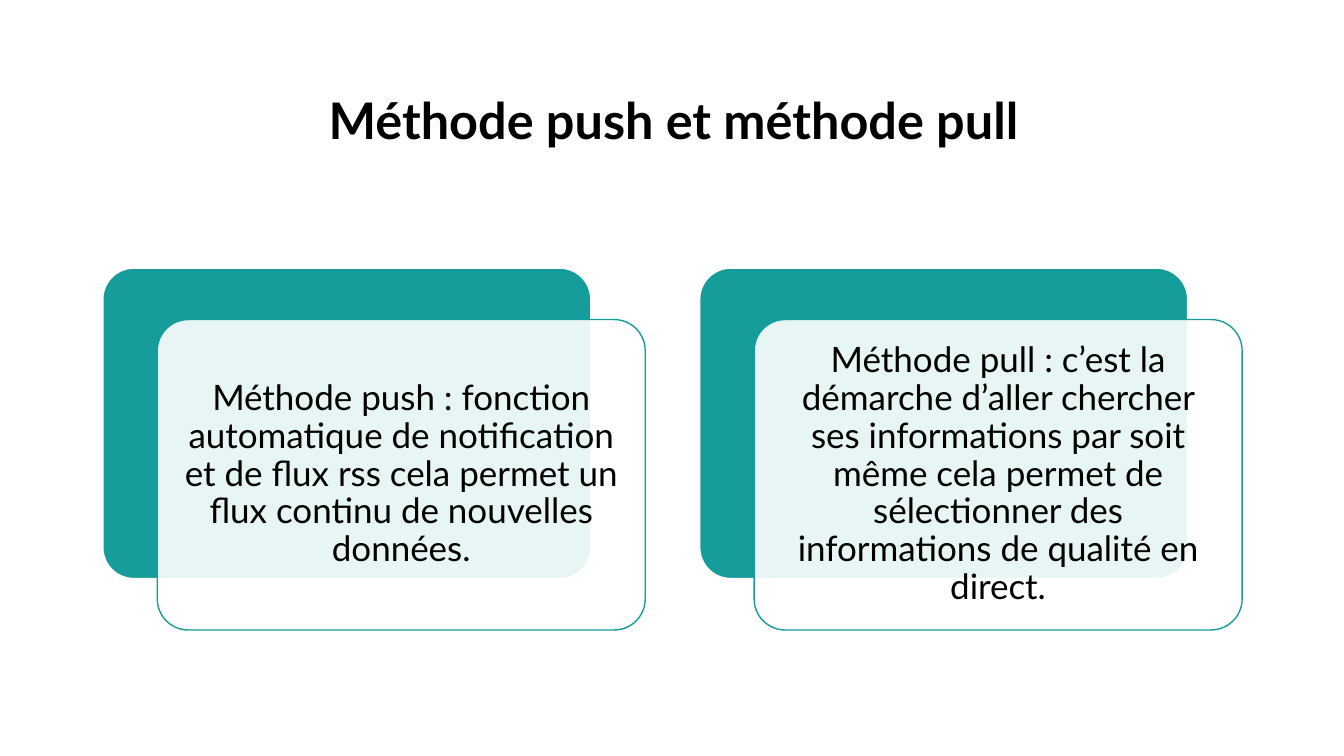
from lxml.etree import SubElement
from pptx import Presentation
from pptx.dml.color import RGBColor
from pptx.enum.shapes import MSO_SHAPE
from pptx.enum.text import MSO_ANCHOR, PP_ALIGN
from pptx.oxml.ns import qn
from pptx.util import Pt

PX = 9144  # 100 px to the inch
TEAL, WHITE, BLACK = "169C9A", "FFFFFF", "000000"
CARDS = [
    "Méthode push : fonction automatique de notification et de flux rss "
    "cela permet un flux continu de nouvelles données.",
    "Méthode pull : c’est la démarche d’aller chercher ses informations par "
    "soit même cela permet de sélectionner des informations de qualité en direct.",
]


def px(*sizes):
    return [size * PX for size in sizes]


def color(code):
    return RGBColor.from_string(code)


def write(shape, text, size, bold=False):
    frame = shape.text_frame
    frame.text = text
    frame.word_wrap = True
    frame.vertical_anchor = MSO_ANCHOR.MIDDLE
    frame.margin_left = frame.margin_right = 10 * PX
    frame.margin_top = frame.margin_bottom = 10 * PX
    para = frame.paragraphs[0]
    para.alignment = PP_ALIGN.CENTER
    para.line_spacing = 0.9
    font = para.runs[0].font
    font.name, font.size, font.bold = "Lato", Pt(size), bold
    font.color.rgb = color(BLACK)


def panel(slide, box, fill, line):
    shape = slide.shapes.add_shape(MSO_SHAPE.ROUNDED_RECTANGLE, *px(*box))
    shape.adjustments[0] = 0.1
    shape.shadow.inherit = False
    shape.fill.solid()
    shape.fill.fore_color.rgb = color(fill)
    shape.line.color.rgb = color(line)
    shape.line.width = Pt(1)
    return shape


def fade(shape, percent):
    """Set the opacity of a solid fill."""
    tone = shape.fill._xPr.find(qn("a:solidFill"))[0]
    SubElement(tone, qn("a:alpha"), val=str(percent * 1000))


def title(slide, box, text):
    write(slide.shapes.add_textbox(*px(*box)), text, 36, bold=True)


def card(slide, box, text):
    """Place a teal panel and a text panel shifted over it."""
    left, top, width, height = box
    wide, high = width - 54, height - 51
    panel(slide, (left, top, wide, high), TEAL, WHITE)
    front = panel(slide, (left + 54, top + 51, wide, high), WHITE, TEAL)
    fade(front, 90)
    write(front, text, 25)


def main():
    deck = Presentation()
    deck.slide_width, deck.slide_height = px(1333, 750)
    slide = deck.slides.add_slide(deck.slide_layouts[6])
    title(slide, (167, 60, 1002, 124), "Méthode push et méthode pull")
    for i, text in enumerate(CARDS):
        card(slide, (102 + i * 592, 266, 538, 359), text)
    deck.save("out.pptx")


if __name__ == "__main__":
    main()
